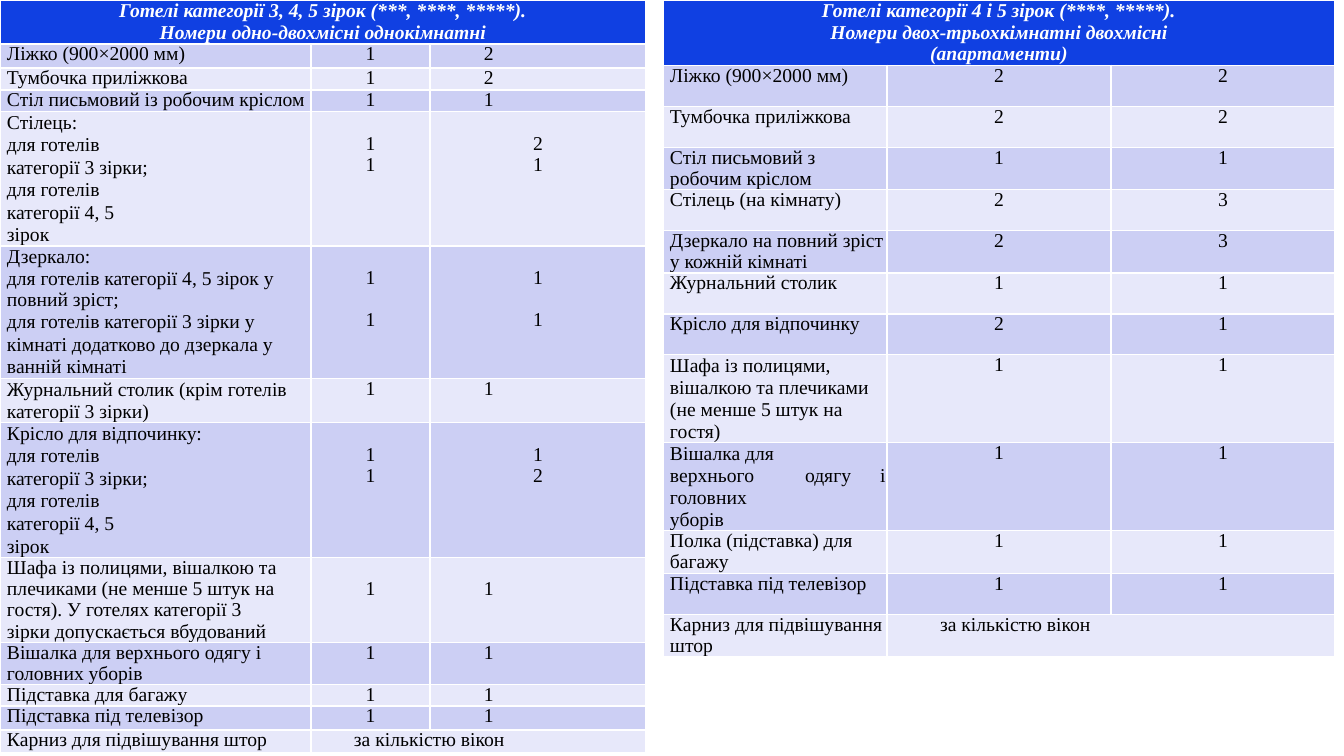
import pptx
import pptx.dml.color
import pptx.enum.text
import pptx.oxml
import pptx.util
from pptx.oxml.ns import qn

PX = 914400 / 100.8
FONT = "Times New Roman"
HEAD, BANDS = "1040E2", ("CCCFF4", "E7E8FA")
CENTER = pptx.enum.text.PP_ALIGN.CENTER
LEAD = 15.1


def px(n):
    return pptx.util.Emu(round(n * PX))


def color(code):
    return pptx.dml.color.RGBColor.from_string(code)


def line(text, **form):
    """Pair a paragraph's text with its format."""
    return text, form


def write(par, text, lead=LEAD, left=0, right=0, before=0, align=None,
          tabs=(), ink="000000", strong=False):
    props = par._p.get_or_add_pPr()
    props.set("marL", str(px(left)))
    props.set("marR", str(px(right)))
    par.line_spacing = pptx.util.Pt(lead)
    if before:
        par.space_before = pptx.util.Pt(before)
    if align is not None:
        par.alignment = align
    if tabs:
        stops = pptx.oxml.parse_xml(
            '<a:tabLst xmlns:a="http://schemas.openxmlformats.org/drawingml/2006/main"/>')
        for stop in tabs:
            tab = stops.makeelement(qn("a:tab"), {"pos": str(px(stop)), "algn": "l"})
            stops.append(tab)
        props.append(stops)
    run = par.add_run()
    run.text = text
    font = run.font
    font.name, font.size = FONT, pptx.util.Pt(14)
    font.bold = font.italic = strong
    font.color.rgb = color(ink)


def fill(cell, lines, top=0, **form):
    cell.margin_top = px(top)
    frame = cell.text_frame
    for i, item in enumerate(lines):
        text, own = item if isinstance(item, tuple) else line(item)
        par = frame.add_paragraph() if i else frame.paragraphs[0]
        write(par, text, **{**form, **own})


def table(slide, x, cols, title, side, head, rows, nums, note):
    """Draw a list of furniture; nums formats the last column, note the merged one."""
    highs = [head] + [row[0] for row in rows]
    grid = slide.shapes.add_table(len(highs), len(cols), px(x), px(0),
                                  px(sum(cols)), px(sum(highs))).table
    grid.horz_banding = False
    for col, wide in zip(grid.columns, cols):
        col.width = px(wide)
    for r, high in enumerate(highs):
        grid.rows[r].height = px(high)
        for cell in grid.rows[r].cells:
            cell.margin_left = cell.margin_right = 0
            cell.margin_top = cell.margin_bottom = 0
            cell.fill.solid()
            cell.fill.fore_color.rgb = color(BANDS[(r - 1) % 2] if r else HEAD)
    grid.cell(0, 0).merge(grid.cell(0, 2))
    fill(grid.cell(0, 0), [line(title[0], lead=15.8), line(title[1], lead=15.4)],
         left=side, right=side, align=CENTER, ink="FFFFFF", strong=True)
    for r, (_, label, one, two, *top) in enumerate(rows, 1):
        gap = top[0] if top else 0
        fill(grid.cell(r, 0), label, left=7)
        if two is None:
            grid.cell(r, 1).merge(grid.cell(r, 2))
            fill(grid.cell(r, 1), one, left=note)
            continue
        fill(grid.cell(r, 1), one, gap, align=CENTER)
        fill(grid.cell(r, 2), two, gap, **(nums if len(two) == 1 else {"align": CENTER}))


STARS = line("для готелів категорії 3 зірки; для готелів категорії 4, 5 зірок",
             lead=16.1, right=157)
APART = [line("1"), line("1", before=LEAD, lead=15.4)]
LAST = line("1", lead=15.4)
RODS = ["Карниз для підвішування штор"]
COUNT = ["за кількістю вікон"]

SINGLE = [
    (24, ["Ліжко (900×2000 мм)"], ["1"], ["2"]),
    (22, ["Тумбочка приліжкова"], ["1"], ["2"]),
    (21, ["Стіл письмовий із робочим кріслом"], ["1"], ["1"]),
    (135, [line("Стілець:", lead=15.8), STARS], ["1", LAST], ["2", LAST], 22),
    (132, [line("Дзеркало:", lead=15.8),
           "для готелів категорії 4, 5 зірок у повний зріст;",
           line("для готелів категорії 3 зірки у кімнаті додатково до дзеркала "
                "у ванній кімнаті", lead=16.1)], APART, APART, 21),
    (44, [line("Журнальний столик (крім готелів категорії 3 зірки)", lead=15.8)],
     ["1"], ["1"]),
    (135, [line("Крісло для відпочинку:", lead=15.8), STARS],
     ["1", LAST], ["1", line("2", lead=15.4)], 22),
    (85, ["Шафа із полицями, вішалкою та плечиками (не менше 5 штук на гостя). "
          "У готелях категорії 3", line("зірки допускається вбудований", lead=15.4)],
     ["1"], ["1"], 21),
    (42, ["Вішалка для верхнього одягу і головних уборів"], ["1"], ["1"]),
    (21, ["Підставка для багажу"], ["1"], ["1"]),
    (24, ["Підставка під телевізор"], ["1"], ["1"]),
    (23, RODS, COUNT, None),
]
SUITE = [
    (41, ["Ліжко (900×2000 мм)"], ["2"], ["2"]),
    (41, ["Тумбочка приліжкова"], ["2"], ["2"]),
    (42, ["Стіл письмовий з робочим кріслом"], ["1"], ["1"]),
    (41, ["Стілець (на кімнату)"], ["2"], ["3"]),
    (42, ["Дзеркало на повний зріст у кожній кімнаті"], ["2"], ["3"]),
    (41, ["Журнальний столик"], ["1"], ["1"]),
    (41, ["Крісло для відпочинку"], ["2"], ["1"]),
    (88, [line("Шафа із полицями, вішалкою та плечиками", lead=15.8),
          line("(не менше 5 штук на гостя)", lead=15.4)], ["1"], ["1"]),
    (88, [line("Вішалка для\tверхнього\tодягу\tі\tголовних", lead=15.8,
               tabs=(135, 234, 294, 314)), line("уборів", lead=15.4)], ["1"], ["1"]),
    (42, ["Полка (підставка) для багажу"], ["1"], ["1"]),
    (41, ["Підставка під телевізор"], ["1"], ["1"]),
    (42, RODS, COUNT, None),
]


def main():
    deck = pptx.Presentation()
    deck.slide_width, deck.slide_height = px(1344), px(756)
    slide = deck.slides.add_slide(deck.slide_layouts[6])
    table(slide, 0, (311, 119, 216),
          ("Готелі категорії 3, 4, 5 зірок (***, ****, *****).",
           "Номери одно-двохмісні однокімнатні"),
          30, 44, SINGLE, {"left": 54}, 43)
    table(slide, 663, (224,) * 3,
          ("Готелі категорії 4 і 5 зірок (****, *****).",
           "Номери двох-трьохкімнатні двохмісні (апартаменти)"),
          120, 65, SUITE, {"align": CENTER}, 53)
    deck.save("out.pptx")


if __name__ == "__main__":
    main()
